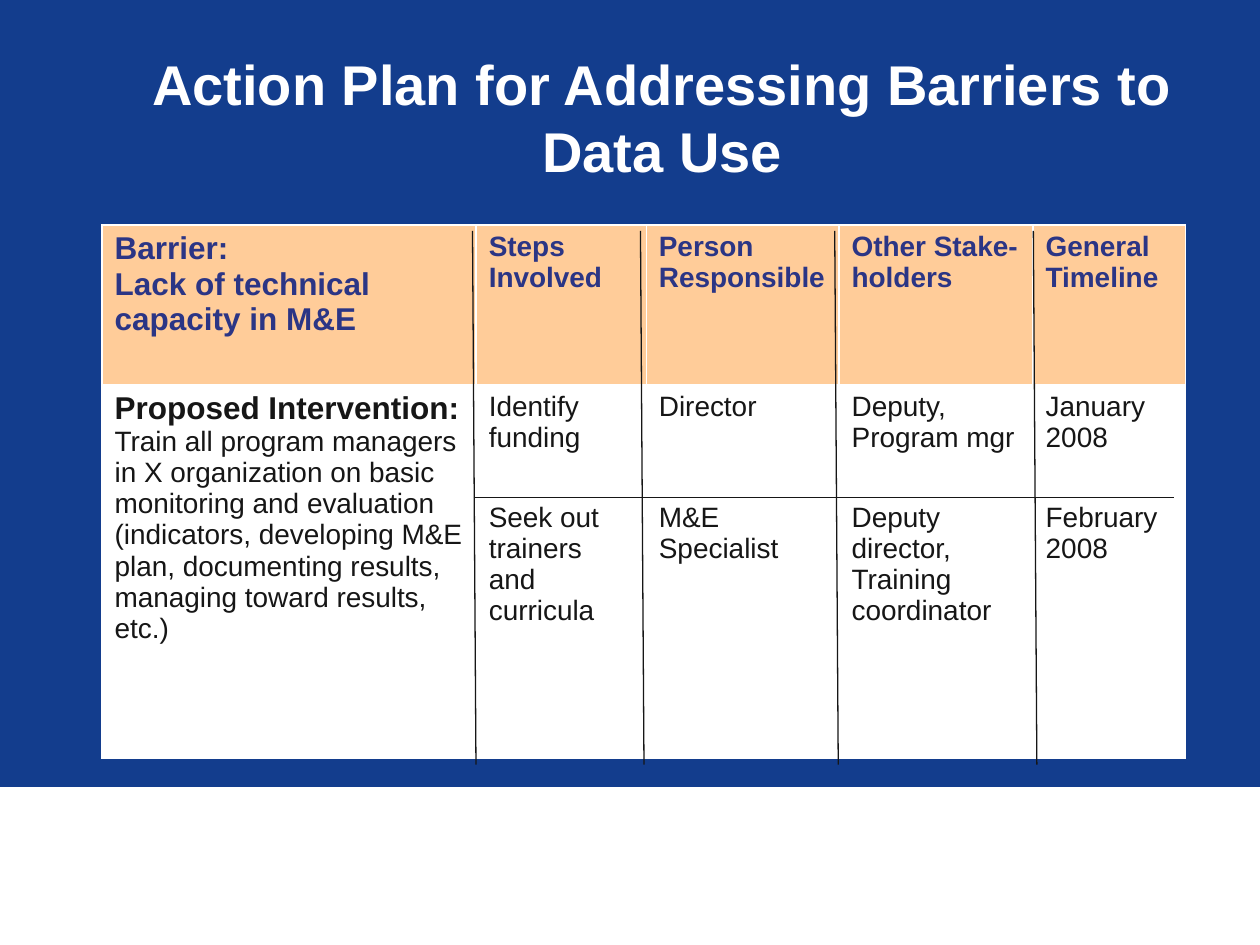
"""Build the action plan slide with its table of barriers and interventions."""
from pptx import Presentation
from pptx.dml.color import RGBColor
from pptx.enum.shapes import MSO_CONNECTOR as CONN, MSO_SHAPE as SHAPE
from pptx.enum.text import MSO_ANCHOR as ANCHOR, PP_ALIGN as ALIGN
from pptx.oxml.ns import qn
from pptx.util import Pt
from lxml import etree

BLUE = RGBColor(0x13, 0x3D, 0x8D)
WHITE = RGBColor(0xFF, 0xFF, 0xFF)
PEACH = RGBColor(0xFF, 0xCC, 0x99)
NAVY = RGBColor(0x2B, 0x35, 0x85)
INK = RGBColor(0x16, 0x16, 0x16)


def add_run(p, text, size, color, bold=False):
    r = p.add_run()
    r.text = text
    r.font.name = "Arial"
    r.font.size = Pt(size)
    r.font.bold = bold
    r.font.color.rgb = color


def add_line(x1, y1, x2, y2):
    c = s.shapes.add_connector(CONN.STRAIGHT, Pt(x1), Pt(y1), Pt(x2), Pt(y2))
    c.line.color.rgb = INK
    c.line.width = Pt(0.75)
    etree.SubElement(c._element.spPr, qn("a:effectLst"))


prs = Presentation()
prs.slide_width, prs.slide_height = Pt(720), Pt(540)
s = prs.slides.add_slide(prs.slide_layouts[6])
s.background.fill.solid()
s.background.fill.fore_color.rgb = BLUE

band = s.shapes.add_shape(SHAPE.RECTANGLE, Pt(0), Pt(450), Pt(720), Pt(90))
band.shadow.inherit = False
band.fill.solid()
band.fill.fore_color.rgb = WHITE
band.line.color.rgb = WHITE
band.line.width = Pt(0.75)

rows = [
    [["Barrier:", "Lack of technical capacity in M&E"], ["Steps Involved"],
     ["Person", "Responsible"], ["Other Stake-holders"], ["General Timeline"]],
    [["Proposed Intervention:",
      "Train all program managers in X organization on basic monitoring and "
      "evaluation (indicators, developing M&E plan, documenting results, "
      "managing toward results, etc.)"],
     ["Identify funding"], ["Director"], ["Deputy, Program mgr"], ["January", "2008"]],
    [[], ["Seek out trainers and curricula"], ["M&E Specialist"],
     ["Deputy director, Training coordinator"], ["February 2008"]],
]
widths = [213.84, 97.2, 110.16, 110.88, 87.12]
heights = [91.44, 63.36, 149.76]
table = s.shapes.add_table(len(rows), len(widths), Pt(58.32), Pt(128.5),
                           Pt(sum(widths)), Pt(sum(heights))).table
table.first_row = table.horz_banding = False
for col, width in zip(table.columns, widths):
    col.width = Pt(width)
for row, height in zip(table.rows, heights):
    row.height = Pt(height)
table.cell(1, 0).merge(table.cell(2, 0))

for i, row in enumerate(rows):
    for j, lines in enumerate(row):
        cell = table.cell(i, j)
        cell.fill.solid()
        cell.fill.fore_color.rgb = PEACH if i == 0 else WHITE
        tf = cell.text_frame
        for k, line in enumerate(lines):
            p = tf.paragraphs[0] if k == 0 else tf.add_paragraph()
            lead = j == 0 and (i == 0 or k == 0)
            add_run(p, line, 18 if lead else 16, NAVY if i == 0 else INK, i == 0 or lead)

title = s.shapes.add_textbox(Pt(72.72), Pt(21.6), Pt(611.28), Pt(90))
tf = title.text_frame
tf.word_wrap = True
tf.vertical_anchor = ANCHOR.MIDDLE
p = tf.paragraphs[0]
p.alignment = ALIGN.CENTER
add_run(p, "Action Plan for Addressing Barriers to Data Use", 32, WHITE, True)

for x in (270, 366, 477, 590.5):
    add_line(x, 132, x + 2, 437)
add_line(270.72, 284.4, 671, 284.4)

prs.save("out.pptx")
